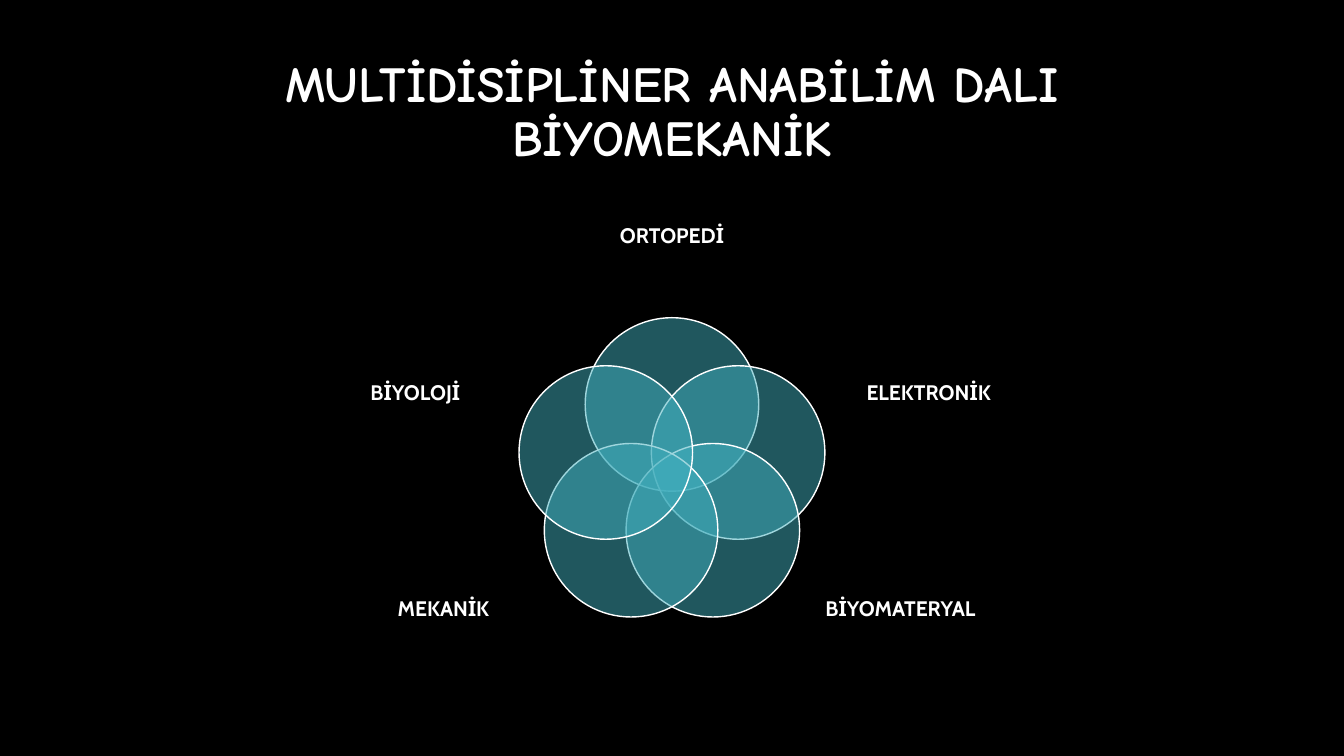
import math
import pptx
import pptx.util
import pptx.dml.color
import pptx.enum.shapes
import pptx.enum.text
import pptx.oxml.ns
import lxml.etree

RGB = pptx.dml.color.RGBColor
BLACK = RGB(0x00, 0x00, 0x00)
WHITE = RGB(0xFF, 0xFF, 0xFF)
TEAL = RGB(0x41, 0xAE, 0xBD)
WIDE, HIGH = 13.33, 7.5
TITLE = {"name": "Comic Neue", "size": pptx.util.Pt(36), "bold": True}
LABEL = {"name": "Cabin", "size": pptx.util.Pt(15), "bold": True}
FRAME = {
    "word_wrap": True,
    "auto_size": pptx.enum.text.MSO_AUTO_SIZE.NONE,
    "vertical_anchor": pptx.enum.text.MSO_ANCHOR.MIDDLE,
}
FLUSH = {f"margin_{side}": 0 for side in ("left", "top", "right", "bottom")}
FIELDS = [
    ("ORTOPEDİ", 50, 31.1, 15, 15.5),
    ("ELEKTRONİK", 69.1, 51.9, 13.4, 16.7),
    ("BİYOMATERYAL", 67, 80.5, 13.4, 16.7),
    ("MEKANİK", 33, 80.5, 13.4, 16.7),
    ("BİYOLOJİ", 30.9, 51.9, 13.4, 16.7),
]
HUB = 62.7
ORBIT = 9.2
SIZE = 22.95


def apply(item, style):
    for key, value in style.items():
        setattr(item, key, value)


class Deck:
    def __init__(self):
        self.prs = pptx.Presentation()
        self.prs.slide_width = pptx.util.Inches(WIDE)
        self.prs.slide_height = pptx.util.Inches(HIGH)
        self.slide = self.prs.slides.add_slide(self.prs.slide_layouts[5])
        back = self.slide.background.fill
        back.solid()
        back.fore_color.rgb = BLACK
        self.group = None

    def box(self, mid, row, wide, high):
        return [
            pptx.util.Inches(share * full / 100)
            for share, full in (
                (mid - wide / 2, WIDE), (row - high / 2, HIGH),
                (wide, WIDE), (high, HIGH),
            )
        ]

    def put(self, frame, text, font, extra):
        apply(frame, FRAME | extra)
        frame.text = text
        para = frame.paragraphs[0]
        para.alignment = pptx.enum.text.PP_ALIGN.CENTER
        for run in para.runs:
            apply(run.font, font)
            run.font.color.rgb = WHITE
        return para

    def title(self, text, *place):
        head = self.slide.shapes.title
        apply(head, dict(zip(("left", "top", "width", "height"), self.box(*place))))
        self.put(head.text_frame, text, TITLE, {}).line_spacing = 0.9

    def venn(self):
        self.group = self.slide.shapes.add_group_shape().shapes

    def circle(self, turn):
        ratio = HIGH / WIDE
        mid = 50 + ORBIT * ratio * math.sin(turn)
        row = HUB - ORBIT * math.cos(turn)
        disc = self.group.add_shape(
            pptx.enum.shapes.MSO_SHAPE.OVAL, *self.box(mid, row, SIZE * ratio, SIZE)
        )
        disc.shadow.inherit = False
        disc.fill.solid()
        disc.fill.fore_color.rgb = TEAL
        tag = pptx.oxml.ns.qn
        tone = disc.element.spPr.find(tag("a:solidFill")).find(tag("a:srgbClr"))
        lxml.etree.SubElement(tone, tag("a:alpha"), val="50000")
        disc.line.color.rgb = WHITE
        disc.line.width = pptx.util.Pt(1)

    def label(self, text, *place):
        note = self.group.add_textbox(*self.box(*place))
        self.put(note.text_frame, text, LABEL, FLUSH)


def main():
    deck = Deck()
    deck.title("MULTİDİSİPLİNER ANABİLİM DALI\vBİYOMEKANİK", 50, 15, 90, 16.67)
    deck.venn()
    for step, field in enumerate(FIELDS):
        deck.circle(step * math.tau / len(FIELDS))
        deck.label(*field)
    deck.prs.save("out.pptx")


if __name__ == "__main__":
    main()
